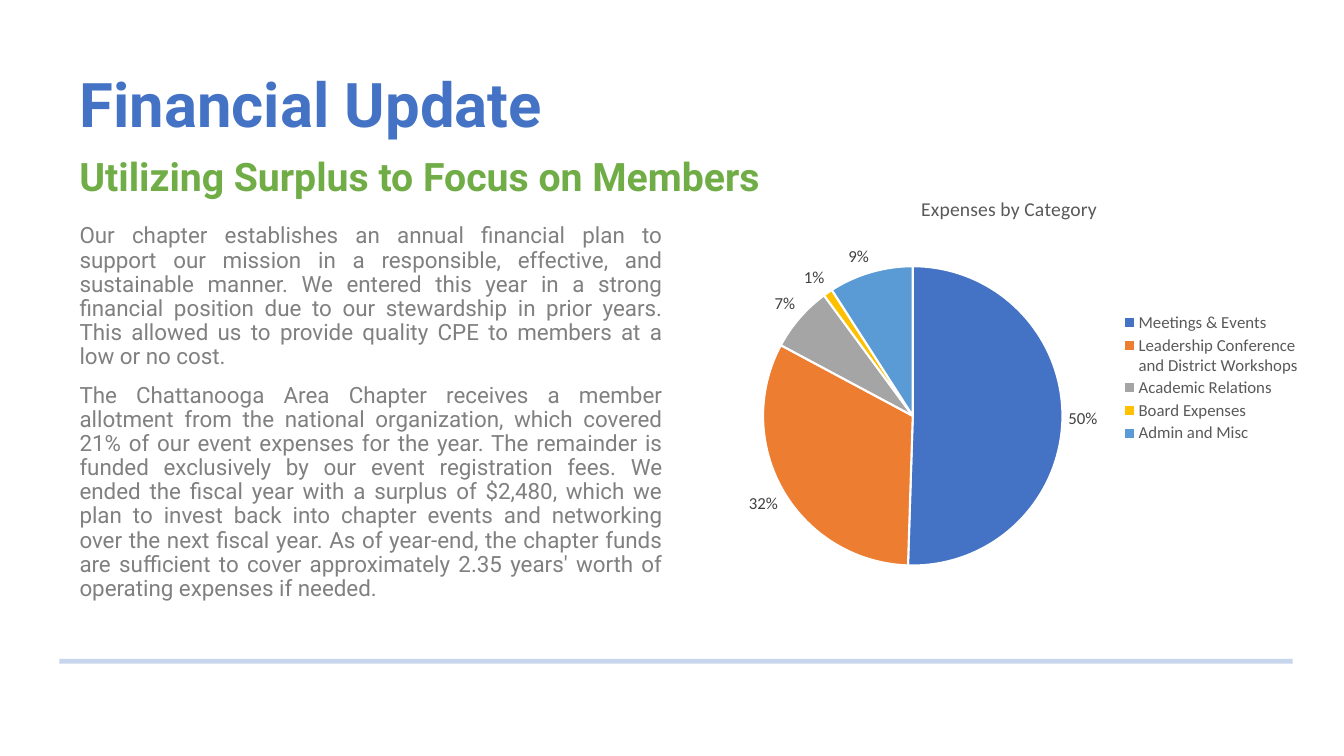
from dataclasses import dataclass

import lxml.etree
import pptx
import pptx.chart.data
import pptx.dml.color
import pptx.enum.chart
import pptx.enum.shapes
import pptx.enum.text
import pptx.oxml
import pptx.oxml.ns
import pptx.util

Inches = pptx.util.Inches
Pt = pptx.util.Pt
qn = pptx.oxml.ns.qn


@dataclass(frozen=True)
class Theme:
    """Fonts, type sizes and colours of the slide."""
    text_font: str = "Roboto"
    chart_font: str = "Calibri"
    title_size: int = 44
    subtitle_size: int = 28
    body_size: int = 16
    chart_title_size: int = 14
    chart_size: int = 12
    title: str = "4472C4"
    subtitle: str = "70AD47"
    body: str = "808080"
    rule: str = "ABC0E4"
    chart_text: str = "595959"
    chart_label: str = "404040"
    slice_edge: str = "FFFFFF"
    slices: tuple = ("4472C4", "ED7D31", "A5A5A5", "FFC000", "5B9BD5")


THEME = Theme()

BODY = (
    "Our chapter establishes an annual financial plan to support our mission in a responsible, "
    "effective, and sustainable manner. We entered this year in a strong financial position due "
    "to our stewardship in prior years. This allowed us to provide quality CPE to members at a "
    "low or no cost.",
    "The Chattanooga Area Chapter receives a member allotment from the national organization, "
    "which covered 21% of our event expenses for the year. The remainder is funded exclusively "
    "by our event registration fees. We ended the fiscal year with a surplus of $2,480, which we "
    "plan to invest back into chapter events and networking over the next fiscal year. As of "
    "year-end, the chapter funds are sufficient to cover approximately 2.35 years' worth of "
    "operating expenses if needed.",
)

EXPENSES = {
    "Meetings & Events": 0.50,
    "Leadership Conference and District Workshops": 0.32,
    "Academic Relations": 0.07,
    "Board Expenses": 0.01,
    "Admin and Misc": 0.09,
}


def rgb(value):
    """Turn a hex string into a colour."""
    return pptx.dml.color.RGBColor.from_string(value)


def style_font(font, name, size, color, bold=False):
    """Set the face, size, colour and weight of a font."""
    font.name = name
    font.size = Pt(size)
    font.bold = bold
    font.color.rgb = rgb(color)


def fill_text(shape, texts, size, color, bold=False, justified=False, middle=False):
    """Write paragraphs into a shape in one style."""
    align = pptx.enum.text.PP_ALIGN
    anchor = pptx.enum.text.MSO_ANCHOR
    frame = shape.text_frame
    frame.word_wrap = True
    frame.auto_size = pptx.enum.text.MSO_AUTO_SIZE.NONE
    frame.vertical_anchor = anchor.MIDDLE if middle else anchor.TOP
    for index, text in enumerate(texts):
        paragraph = frame.paragraphs[0] if index == 0 else frame.add_paragraph()
        paragraph.text = text
        paragraph.alignment = align.JUSTIFY if justified else align.LEFT
        paragraph.line_spacing = 0.9
        paragraph.space_before = Pt(10 if index else 0)
        style_font(paragraph.font, THEME.text_font, size, color, bold)


def add_heading(slide, left, top):
    """Place the title and the subtitle below it."""
    title = slide.shapes.title
    title.left, title.top = Inches(left), Inches(top)
    title.width, title.height = Inches(8.64), Inches(1.15)
    fill_text(title, ["Financial Update"], THEME.title_size, THEME.title, bold=True, middle=True)
    subtitle = slide.shapes.add_textbox(
        Inches(left), Inches(top + 1.02), Inches(7.94), Inches(0.67))
    fill_text(subtitle, ["Utilizing Surplus to Focus on Members"],
              THEME.subtitle_size, THEME.subtitle, bold=True)


def add_body(slide, left, top, width, height):
    """Place the justified text column."""
    box = slide.shapes.add_textbox(Inches(left), Inches(top), Inches(width), Inches(height))
    fill_text(box, BODY, THEME.body_size, THEME.body, justified=True)


def set_layout(element, x, y, width, height, inner=False):
    """Fix a chart part at fractions of the chart area."""
    for old in element.findall(qn("c:layout")):
        element.remove(old)
    layout = lxml.etree.Element(qn("c:layout"))
    manual = lxml.etree.SubElement(layout, qn("c:manualLayout"))
    settings = [("layoutTarget", "inner")] if inner else []
    settings += [("xMode", "edge"), ("yMode", "edge"),
                 ("x", x), ("y", y), ("w", width), ("h", height)]
    for tag, value in settings:
        lxml.etree.SubElement(manual, qn(f"c:{tag}")).set("val", str(value))
    position = element.find(qn("c:legendPos"))
    if position is None:
        element.insert(0, layout)
    else:
        position.addnext(layout)


def add_expense_chart(slide, left, top, width, height):
    """Place the pie chart of expenses with its legend and labels."""
    data = pptx.chart.data.CategoryChartData(number_format="0%")
    data.categories = list(EXPENSES)
    data.add_series("Series 1", list(EXPENSES.values()))
    chart = slide.shapes.add_chart(
        pptx.enum.chart.XL_CHART_TYPE.PIE,
        Inches(left), Inches(top), Inches(width), Inches(height), data).chart
    style_font(chart.font, THEME.chart_font, THEME.chart_size, THEME.chart_text)

    chart.has_title = True
    chart.chart_title.include_in_layout = False
    paragraph = chart.chart_title.text_frame.paragraphs[0]
    paragraph.text = "Expenses by Category"
    style_font(paragraph.font, THEME.chart_font, THEME.chart_title_size, THEME.chart_text)

    chart.has_legend = True
    chart.legend.position = pptx.enum.chart.XL_LEGEND_POSITION.RIGHT
    chart.legend.include_in_layout = False
    style_font(chart.legend.font, THEME.chart_font, THEME.chart_size, THEME.chart_text)

    plot = chart.plots[0]
    plot.vary_by_categories = True
    for index, color in enumerate(THEME.slices):
        point = plot.series[0].points[index]
        point.format.fill.solid()
        point.format.fill.fore_color.rgb = rgb(color)
        point.format.line.color.rgb = rgb(THEME.slice_edge)
        point.format.line.width = Pt(1.5)

    labels = plot.series[0].data_labels
    labels.show_value = True
    labels.number_format = "0%"
    labels.number_format_is_linked = False
    labels.position = pptx.enum.chart.XL_LABEL_POSITION.OUTSIDE_END
    style_font(labels.font, THEME.chart_font, THEME.chart_size, THEME.chart_label)

    plot_area = chart.element.find(".//" + qn("c:plotArea"))
    set_layout(plot_area, 0.09, 0.22, 0.5, 0.75, inner=True)
    set_layout(chart.element.find(".//" + qn("c:legend")), 0.68, 0.33, 0.31, 0.34)


def add_rule(slide, left, top, width):
    """Draw the pale line along the foot of the slide."""
    rule = slide.shapes.add_connector(
        pptx.enum.shapes.MSO_CONNECTOR.STRAIGHT,
        Inches(left), Inches(top), Inches(left + width), Inches(top))
    rule.line.color.rgb = rgb(THEME.rule)
    rule.line.width = Pt(3.5)
    properties = rule.element.spPr
    color = properties.find(".//" + qn("a:srgbClr"))
    lxml.etree.SubElement(color, qn("a:alpha")).set("val", "65000")
    lxml.etree.SubElement(properties, qn("a:effectLst"))


def main():
    """Build the financial update slide and save it."""
    presentation = pptx.Presentation()
    presentation.slide_width = Inches(13.33)
    presentation.slide_height = Inches(7.5)
    slide = presentation.slides.add_slide(presentation.slide_layouts[5])
    add_rule(slide, 0.59, 6.56, 12.23)
    add_heading(slide, 0.69, 0.49)
    add_body(slide, 0.69, 2.18, 5.98, 4.34)
    add_expense_chart(slide, 7.02, 1.77, 5.98, 3.96)
    presentation.save("out.pptx")


if __name__ == "__main__":
    main()
